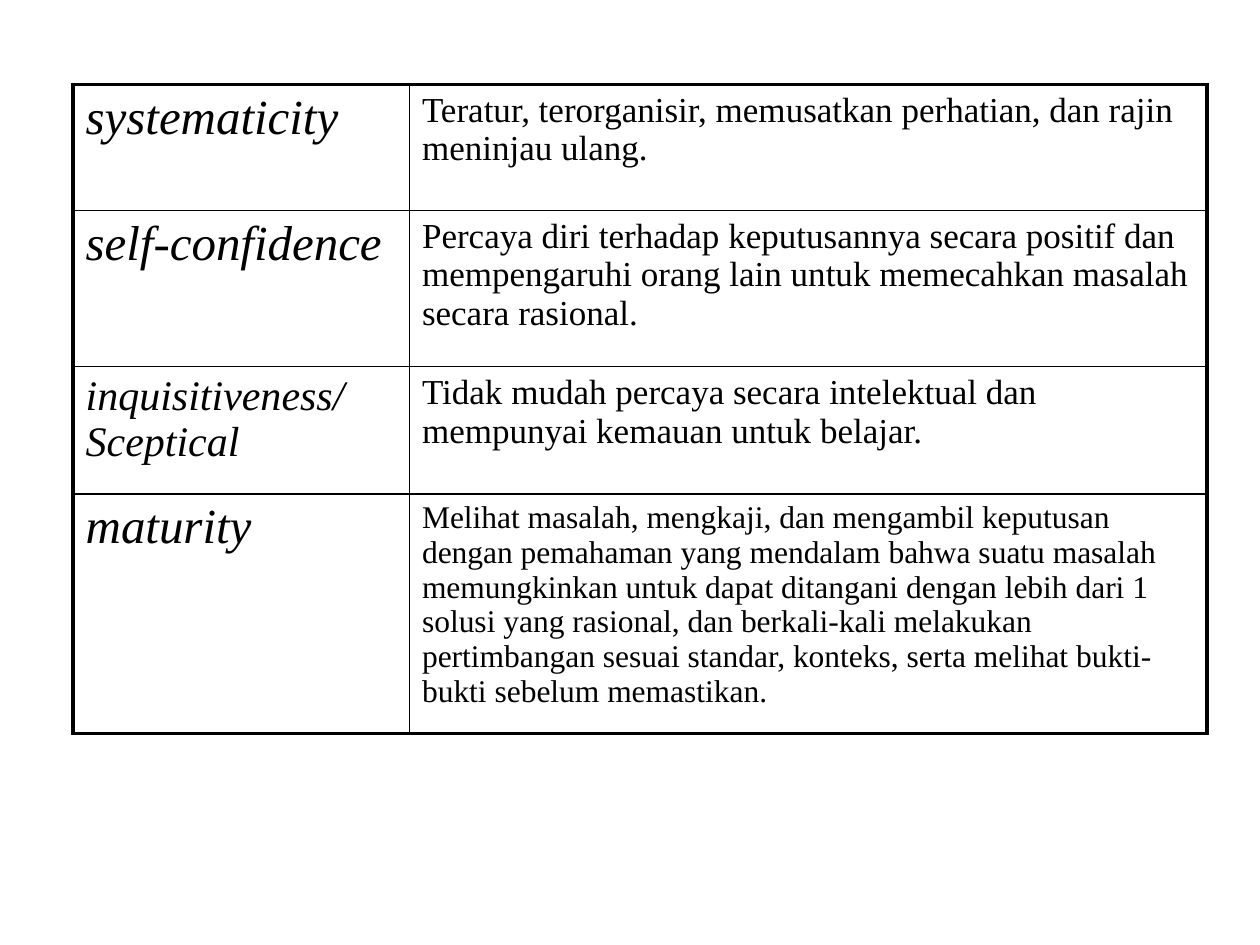
import pptx
import pptx.dml.color
import pptx.oxml.ns
import pptx.util
from lxml import etree

Inches, Pt = pptx.util.Inches, pptx.util.Pt

# Content: trait, trait size, description, description size, row height
ROWS = [
    ("systematicity", "large",
     "Teratur, terorganisir, memusatkan perhatian, dan rajin meninjau ulang.",
     "body", 1.0),
    ("self-confidence", "large",
     "Percaya diri terhadap keputusannya secara positif dan mempengaruhi "
     "orang lain untuk memecahkan masalah secara rasional.",
     "body", 1.24),
    ("inquisitiveness/Sceptical", "medium",
     "Tidak mudah percaya secara intelektual dan mempunyai kemauan untuk belajar.",
     "body", 1.01),
    ("maturity", "large",
     "Melihat masalah, mengkaji, dan mengambil keputusan dengan pemahaman yang "
     "mendalam bahwa suatu masalah memungkinkan untuk dapat ditangani dengan "
     "lebih dari 1 solusi yang rasional, dan berkali-kali melakukan pertimbangan "
     "sesuai standar, konteks, serta melihat bukti-bukti sebelum memastikan.",
     "small", 1.9),
]
COLS = [2.67, 6.33]
LEFT, TOP = 0.58, 0.67

THEME = {
    "font": "Times New Roman",
    "ink": "000000",
    "sizes": {"large": 28, "medium": 24, "body": 20, "small": 18},
    "outer": 2.25,
    "inner": 1,
}


def add_border(cell, side, width):
    ln = etree.SubElement(cell._tc.get_or_add_tcPr(),
                          pptx.oxml.ns.qn(f"a:ln{side}"), w=str(Pt(width)))
    fill = etree.SubElement(ln, pptx.oxml.ns.qn("a:solidFill"))
    etree.SubElement(fill, pptx.oxml.ns.qn("a:srgbClr"), val=THEME["ink"])


def fill_cell(cell, text, size, italic):
    tf = cell.text_frame
    tf.text = text
    font = tf.paragraphs[0].font
    font.name = THEME["font"]
    font.size = Pt(THEME["sizes"][size])
    font.italic = italic
    font.bold = False
    font.color.rgb = pptx.dml.color.RGBColor.from_string(THEME["ink"])


prs = pptx.Presentation()
prs.slide_width, prs.slide_height = Inches(10), Inches(7.5)
s = prs.slides.add_slide(prs.slide_layouts[6])

# Table grid
table = s.shapes.add_table(
    len(ROWS), len(COLS), Inches(LEFT), Inches(TOP),
    Inches(sum(COLS)), Inches(sum(row[-1] for row in ROWS))).table
table.first_row = table.horz_banding = False
for column, width in zip(table.columns, COLS):
    column.width = Inches(width)

# Cells: heavy lines on the outside, thin lines within
for i, (trait, trait_size, description, description_size, height) in enumerate(ROWS):
    table.rows[i].height = Inches(height)
    fill_cell(table.cell(i, 0), trait, trait_size, True)
    fill_cell(table.cell(i, 1), description, description_size, False)
    for j in range(len(COLS)):
        cell = table.cell(i, j)
        on_edge = {"L": j == 0, "R": j == len(COLS) - 1,
                   "T": i == 0, "B": i == len(ROWS) - 1}
        for side, outside in on_edge.items():
            add_border(cell, side, THEME["outer" if outside else "inner"])
        cell.fill.background()

prs.save("out.pptx")
